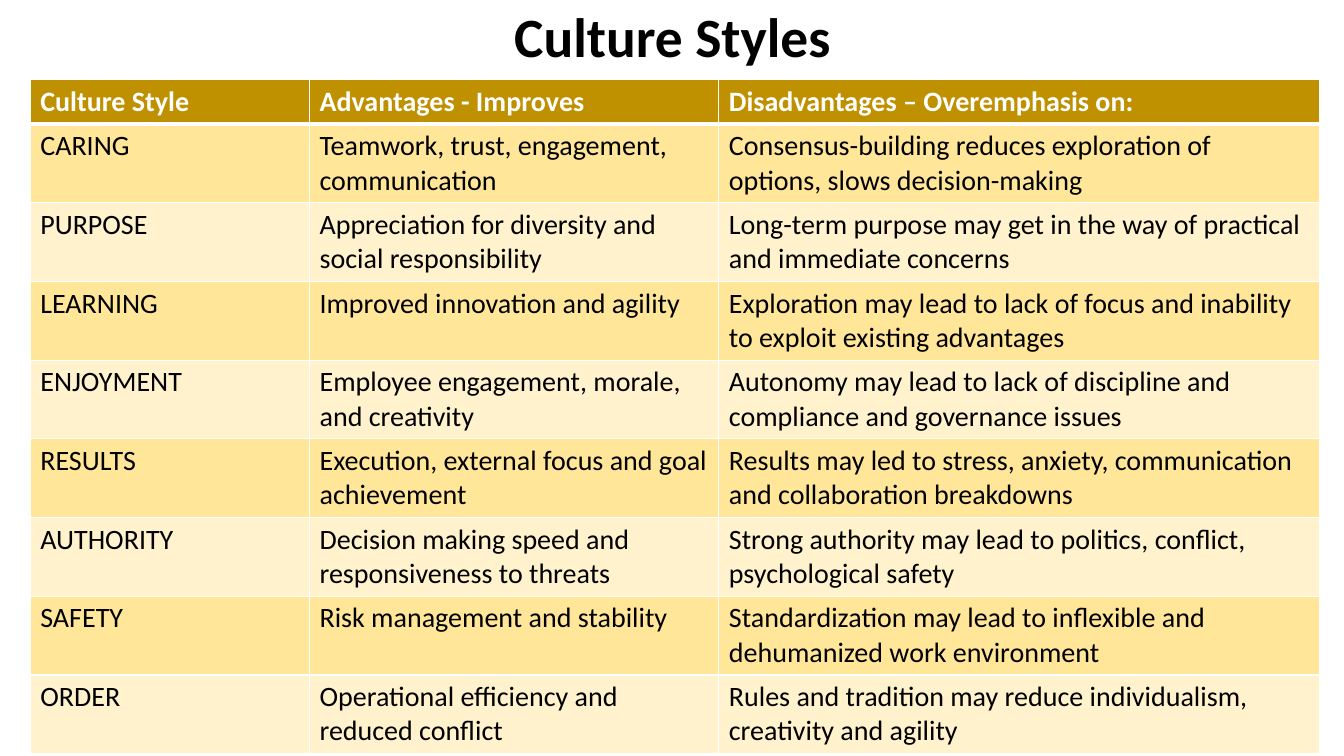
import pptx
import pptx.dml.color
import pptx.enum.text
import pptx.oxml
import pptx.oxml.ns
import pptx.util
from dataclasses import dataclass

TITLE = "Culture Styles"
HEADER = ("Culture Style", "Advantages - Improves", "Disadvantages – Overemphasis on:")
STYLES = [
    ("CARING", "Teamwork, trust, engagement, communication",
     "Consensus-building reduces exploration of options, slows decision-making"),
    ("PURPOSE", "Appreciation for diversity and social responsibility",
     "Long-term purpose may get in the way of practical and immediate concerns"),
    ("LEARNING", "Improved innovation and agility",
     "Exploration may lead to lack of focus and inability to exploit existing advantages"),
    ("ENJOYMENT", "Employee engagement, morale, and creativity",
     "Autonomy may lead to lack of discipline and compliance and governance issues"),
    ("RESULTS", "Execution, external focus and goal achievement",
     "Results may led to stress, anxiety, communication and collaboration breakdowns"),
    ("AUTHORITY", "Decision making speed and responsiveness to threats",
     "Strong authority may lead to politics, conflict, psychological safety"),
    ("SAFETY", "Risk management and stability",
     "Standardization may lead to inflexible and dehumanized work environment"),
    ("ORDER", "Operational efficiency and reduced conflict",
     "Rules and tradition may reduce individualism, creativity and agility"),
]

SLIDE_SIZE = (13.33, 7.5)
TITLE_BOX = (0.92, 0.15, 11.5, 0.48)
TABLE_LEFT, TABLE_TOP = 0.3, 0.79
COLUMNS = (2.77, 4.06, 5.96)
HEADER_HEIGHT, STYLE_HEIGHT = 0.41, 0.77


@dataclass(frozen=True)
class Theme:
    font: str = "Calibri"
    title_size: float = 39.6
    table_size: float = 20
    text: str = "000000"
    header_text: str = "FFFFFF"
    header_fill: str = "BF9000"
    bands: tuple = ("FFE699", "FFF2CC")
    rule: str = "FFFFFF"
    rule_width: float = 1
    header_rule_width: float = 3


THEME = Theme()


def inches(values):
    return [pptx.util.Inches(v) for v in values]


def rgb(value):
    return pptx.dml.color.RGBColor.from_string(value)


def write(p, text, size, color, bold):
    r = p.add_run()
    r.text = text
    r.font.name = THEME.font
    r.font.size = pptx.util.Pt(size)
    r.font.bold = bold
    r.font.color.rgb = rgb(color)


def set_borders(cell, top, bottom):
    """Rule all four sides; top and bottom are widths in points."""
    tcPr = cell._tc.get_or_add_tcPr()
    widths = {"lnL": THEME.rule_width, "lnR": THEME.rule_width, "lnT": top, "lnB": bottom}
    for i, (side, width) in enumerate(widths.items()):
        tcPr.insert(i, pptx.oxml.parse_xml(
            f'<a:{side} {pptx.oxml.ns.nsdecls("a")} w="{pptx.util.Pt(width)}">'
            f'<a:solidFill><a:srgbClr val="{THEME.rule}"/></a:solidFill></a:{side}>'))


def add_title(slide):
    sp = slide.shapes.title
    sp.left, sp.top, sp.width, sp.height = inches(TITLE_BOX)
    tf = sp.text_frame
    tf.word_wrap = True
    tf.auto_size = pptx.enum.text.MSO_AUTO_SIZE.NONE
    tf.vertical_anchor = pptx.enum.text.MSO_ANCHOR.MIDDLE
    p = tf.paragraphs[0]
    p.alignment = pptx.enum.text.PP_ALIGN.CENTER
    p.line_spacing = 0.9
    write(p, TITLE, THEME.title_size, THEME.text, True)


def add_styles_table(slide):
    rows = [HEADER, *STYLES]
    heights = [HEADER_HEIGHT] + [STYLE_HEIGHT] * len(STYLES)
    box = inches((TABLE_LEFT, TABLE_TOP, sum(COLUMNS), sum(heights)))
    table = slide.shapes.add_table(len(rows), len(COLUMNS), *box).table
    for column, width in zip(table.columns, inches(COLUMNS)):
        column.width = width
    for i, (row, height) in enumerate(zip(table.rows, inches(heights))):
        row.height = height
        is_header = i == 0
        fill = THEME.header_fill if is_header else THEME.bands[(i - 1) % 2]
        color = THEME.header_text if is_header else THEME.text
        top = THEME.header_rule_width if i == 1 else THEME.rule_width
        bottom = THEME.header_rule_width if is_header else THEME.rule_width
        for cell, text in zip(row.cells, rows[i]):
            cell.fill.solid()
            cell.fill.fore_color.rgb = rgb(fill)
            set_borders(cell, top, bottom)
            write(cell.text_frame.paragraphs[0], text, THEME.table_size, color, is_header)


def main():
    prs = pptx.Presentation()
    prs.slide_width, prs.slide_height = inches(SLIDE_SIZE)
    slide = prs.slides.add_slide(prs.slide_layouts.get_by_name("Title Only"))
    add_title(slide)
    add_styles_table(slide)
    prs.save("out.pptx")


if __name__ == "__main__":
    main()
